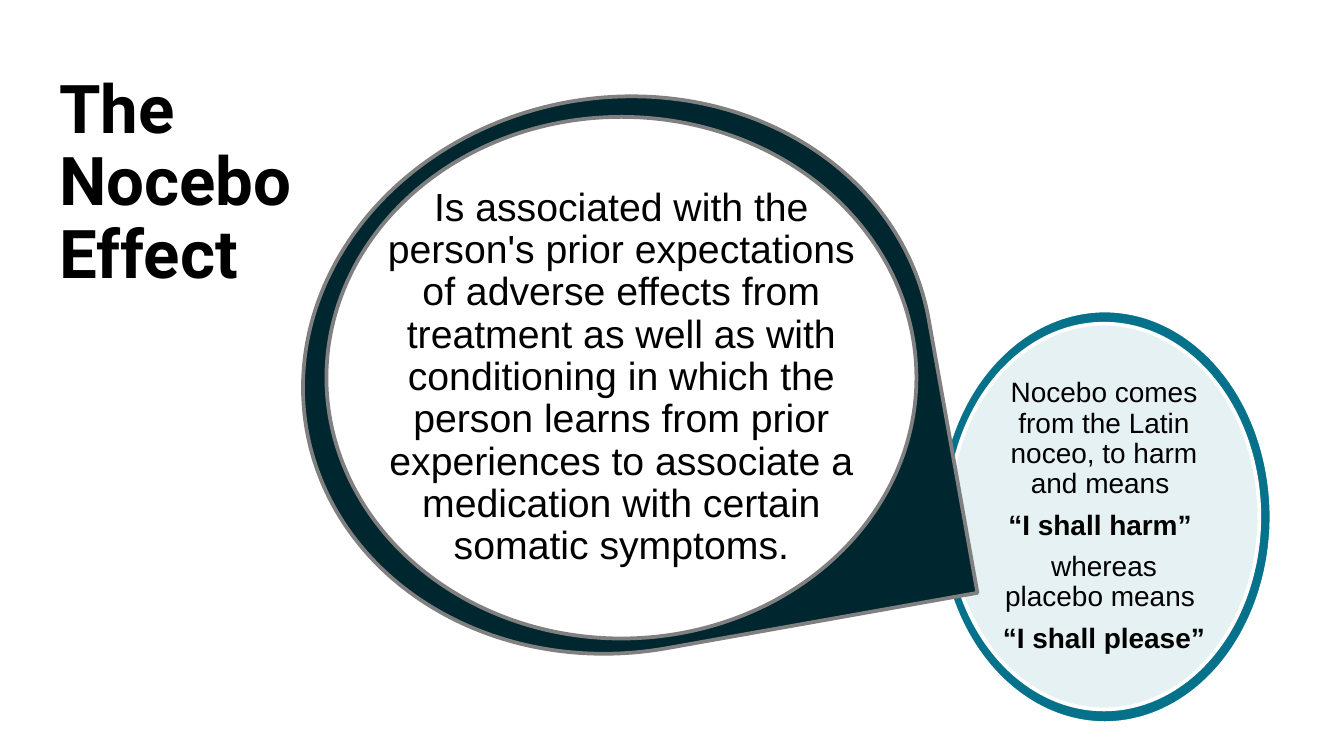
import pptx
import pptx.util
import pptx.dml.color
import pptx.enum.shapes
import pptx.enum.text
import lxml.etree

Cm = pptx.util.Cm
Pt = pptx.util.Pt
RGBColor = pptx.dml.color.RGBColor
Kind = pptx.enum.shapes.MSO_SHAPE
Align = pptx.enum.text.PP_ALIGN
Anchor = pptx.enum.text.MSO_ANCHOR

BLACK = RGBColor(0, 0, 0)
WHITE = RGBColor(255, 255, 255)
TEAL = RGBColor(0x06, 0x71, 0x8A)
DARK = RGBColor(0x00, 0x26, 0x2F)
GRAY = RGBColor(0x80, 0x80, 0x80)


def draw(kind, box, fill, line):
    shape = slide.shapes.add_shape(kind, *map(Cm, box))
    shape.shadow.inherit = False
    shape.fill.solid()
    shape.fill.fore_color.rgb = fill
    shape.line.color.rgb = line
    shape.line.width = Pt(2)
    return shape


def write(box, inset, lines, font, size, align, anchor, after):
    frame = slide.shapes.add_textbox(*map(Cm, box)).text_frame
    frame.word_wrap = True
    frame.vertical_anchor = anchor
    frame.margin_left = frame.margin_right = Cm(inset)
    frame.margin_top = frame.margin_bottom = Cm(inset)
    for i, (text, bold) in enumerate(lines):
        para = frame.add_paragraph() if i else frame.paragraphs[0]
        para.alignment = align
        para.line_spacing = 0.9
        para.space_after = Pt(after)
        run = para.add_run()
        run.text = text
        run.font.name = font
        run.font.size = Pt(size)
        run.font.bold = bold
        run.font.color.rgb = BLACK


deck = pptx.Presentation()
deck.slide_width = Cm(25.4)
deck.slide_height = Cm(14.29)
slide = deck.slides.add_slide(deck.slide_layouts[6])

write((1.12, 1.42, 5.79, 10.64), 0, [("The Nocebo Effect", True)],
      "Roboto", 36, Align.LEFT, Anchor.TOP, 0)

latin = [
    ("Nocebo comes from the Latin noceo, to harm and means ", False),
    ("“I shall harm” ", True),
    ("whereas placebo means ", False),
    ("“I shall please”", True),
]
claim = [
    ("Is associated with the person's prior expectations of adverse effects "
     "from treatment as well as with conditioning in which the person learns "
     "from prior experiences to associate a medication with certain somatic "
     "symptoms.", False),
]

small = (17.93, 6.12, 5.87, 7.29)
draw(Kind.OVAL, (17.73, 5.87, 6.3, 7.8), TEAL, WHITE)
tint = draw(Kind.OVAL, small, WHITE, WHITE)
color = tint.fill._xPr.solidFill[0]
name = pptx.oxml.ns.qn("a:alpha")
lxml.etree.SubElement(color, name).set("val", "90000")
write(small, 1.02, latin, "Arial", 15, Align.CENTER, Anchor.MIDDLE, 6)

large = (6.17, 2.21, 11.15, 9.86)
drop = draw(Kind.TEAR, (6.43, 1.12, 10.49, 11.94), DARK, GRAY)
drop.rotation = 79.9
draw(Kind.OVAL, large, WHITE, GRAY)
write(large, 1.02, claim, "Arial", 21, Align.CENTER, Anchor.MIDDLE, 0)

deck.save("out.pptx")
